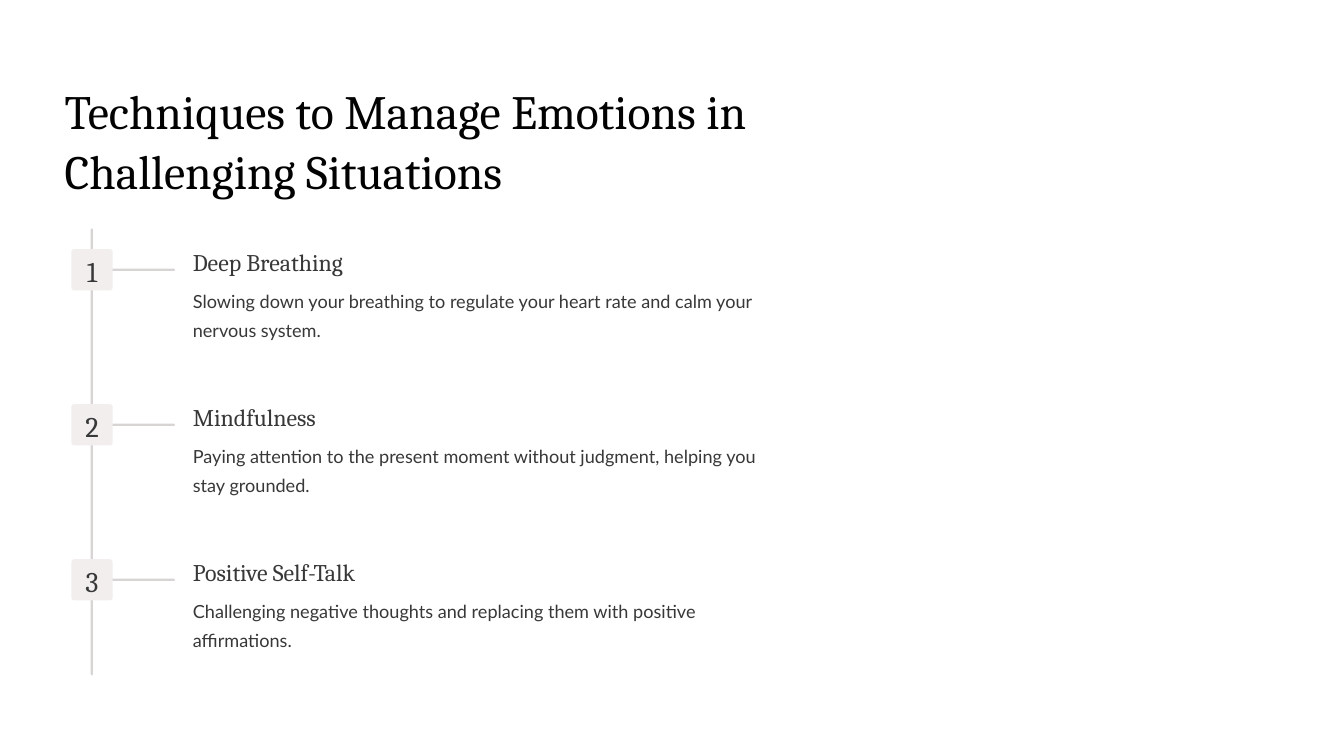
"""Build a slide with a numbered timeline of three techniques for managing emotions."""
from pptx import Presentation
from pptx import util as u
from pptx.dml import color
from pptx.enum import shapes, text

HUES = {"back": "FFFFFF", "title": "020202", "ink": "383838", "line": "D8D4D4", "badge": "F2EEEE"}
STEPS = [
    ("Deep Breathing",
     "Slowing down your breathing to regulate your heart rate and calm your nervous system."),
    ("Mindfulness",
     "Paying attention to the present moment without judgment, helping you stay grounded."),
    ("Positive Self-Talk",
     "Challenging negative thoughts and replacing them with positive affirmations."),
]
TOP, PITCH = 9.42, 5.86


def write(shape, words, size, lead, font="Cambria", hue="ink", align=text.PP_ALIGN.LEFT, inset=0):
    frame = shape.text_frame
    frame.word_wrap = True
    frame.auto_size = text.MSO_AUTO_SIZE.NONE
    frame.vertical_anchor = text.MSO_ANCHOR.TOP
    frame.margin_left = frame.margin_right = frame.margin_bottom = 0
    frame.margin_top = u.Cm(inset)
    para = frame.paragraphs[0]
    para.alignment = align
    para.line_spacing = u.Pt(lead)
    run = para.add_run()
    run.text = words
    run.font.name = font
    run.font.size = u.Pt(size)
    run.font.color.rgb = color.RGBColor.from_string(HUES[hue])


def block(left, top, width, height, hue, bend):
    shape = slide.shapes.add_shape(
        shapes.MSO_SHAPE.ROUNDED_RECTANGLE, u.Cm(left), u.Cm(top), u.Cm(width), u.Cm(height))
    shape.adjustments[0] = bend
    shape.shadow.inherit = False
    shape.fill.solid()
    shape.fill.fore_color.rgb = color.RGBColor.from_string(HUES[hue])
    shape.line.fill.background()
    return shape


deck = Presentation()
deck.slide_width, deck.slide_height = u.Cm(50.8), u.Cm(28.58)
slide = deck.slides.add_slide(deck.slide_layouts[5])
slide.background.fill.solid()
slide.background.fill.fore_color.rgb = color.RGBColor.from_string(HUES["back"])

title = slide.shapes.title
title.left, title.top, title.width, title.height = u.Cm(2.44), u.Cm(2.97), u.Cm(26.9), u.Cm(4.65)
write(title, "Techniques to Manage Emotions in Challenging Situations", 51.2, 64.4, hue="title")

block(3.43, 8.64, 0.08, 16.89, "line", 0.5)

for num, (name, note) in enumerate(STEPS):
    top = TOP + num * PITCH
    block(4.17, top + 0.74, 2.44, 0.08, "line", 0.5)
    badge = block(2.7, top, 1.56, 1.56, "badge", 0.07)
    write(badge, str(num + 1), 30.6, 30.6, align=text.PP_ALIGN.CENTER, inset=0.38)
    head = slide.shapes.add_textbox(u.Cm(7.29), u.Cm(top - 0.1), u.Cm(9.12), u.Cm(1.17))
    write(head, name, 25.6, 31.9)
    body = slide.shapes.add_textbox(u.Cm(7.29), u.Cm(top + 1.29), u.Cm(22.02), u.Cm(2.41))
    write(body, note, 19.4, 31.2, font="Lato")

deck.save("out.pptx")
